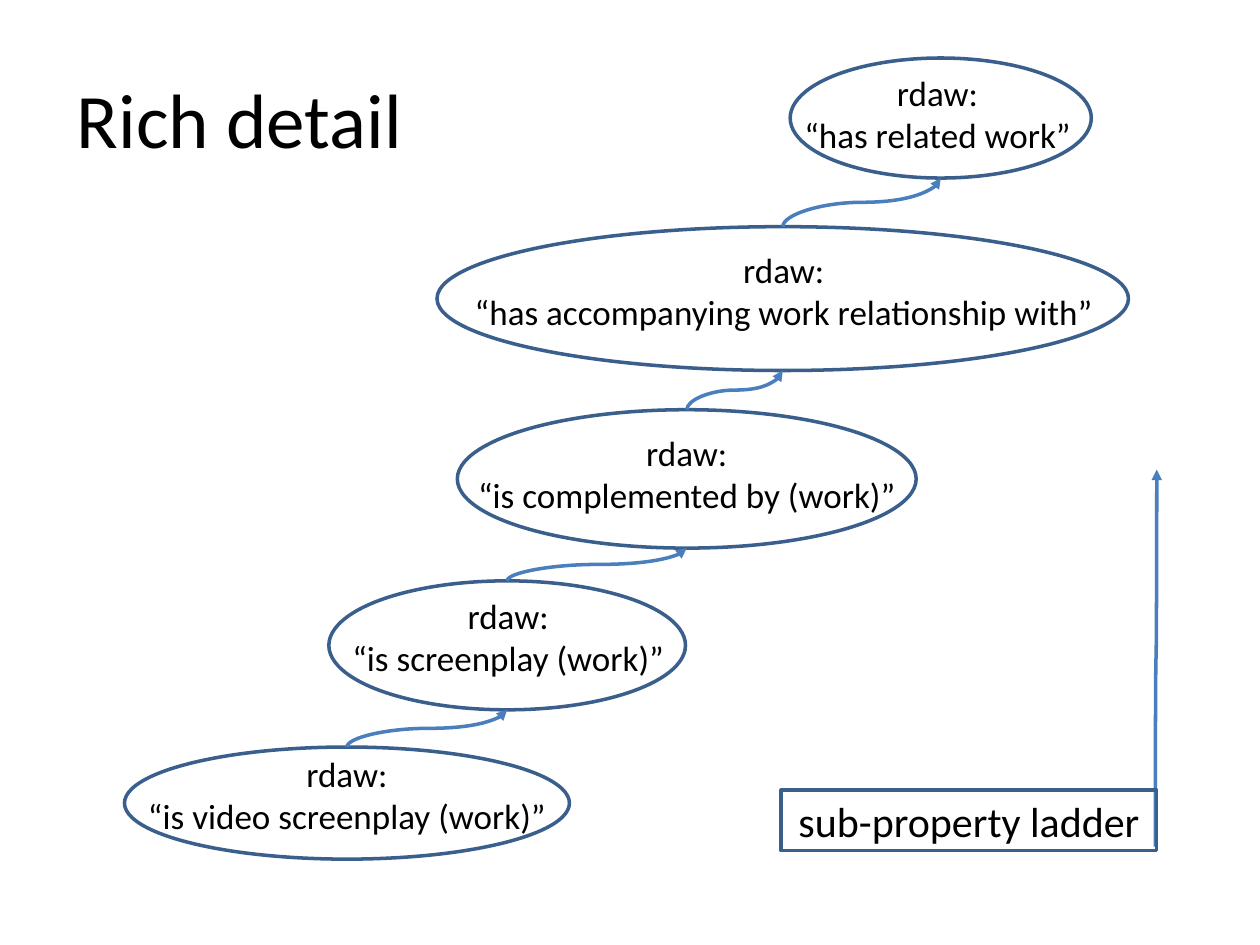
from itertools import pairwise

from lxml.etree import SubElement
from pptx import Presentation
from pptx.dml.color import RGBColor
from pptx.enum.shapes import MSO_CONNECTOR as Link, MSO_SHAPE as Shape
from pptx.enum.text import MSO_ANCHOR as Anchor, MSO_AUTO_SIZE as Fit, PP_ALIGN as Align
from pptx.oxml.ns import qn
from pptx.util import Cm, Pt


def colour(hex_string):
    return RGBColor.from_string(hex_string)


class LadderSlide:
    FONT, INK, OUTLINE, ARROW = "Calibri", "000000", "3A5F8C", "4B7EBC"
    LINE_WIDTH = Pt(2)
    INSET = Cm(0.1)

    def __init__(self, deck):
        self.slide = deck.slides.add_slide(deck.slide_layouts[6])
        self.shapes = self.slide.shapes

    def set_text(self, shape, lines, size, align=Align.CENTER, inset=INSET, wrap=True):
        frame = shape.text_frame
        settings = {"word_wrap": wrap, "auto_size": Fit.SHAPE_TO_FIT_TEXT,
                    "vertical_anchor": Anchor.TOP}
        if inset is not None:
            for side in ("left", "top", "right", "bottom"):
                settings[f"margin_{side}"] = inset
        for name, value in settings.items():
            setattr(frame, name, value)
        frame.text = "\n".join(lines)
        for paragraph in frame.paragraphs:
            paragraph.alignment = align
            for name, value in {"name": self.FONT, "size": Pt(size)}.items():
                setattr(paragraph.font, name, value)
            paragraph.font.color.rgb = colour(self.INK)

    def outline(self, shapes, kind, box):
        shape = shapes.add_shape(kind, *map(Cm, box))
        shape.shadow.inherit = False
        shape.fill.background()
        shape.line.color.rgb = colour(self.OUTLINE)
        shape.line.width = self.LINE_WIDTH
        return shape

    def title(self, text, box):
        self.set_text(self.shapes.add_textbox(*map(Cm, box)), [text], 44,
                      Align.LEFT, inset=None, wrap=False)

    def rung(self, lines, oval, label):
        group = self.shapes.add_group_shape()
        self.outline(group.shapes, Shape.OVAL, oval)
        self.set_text(group.shapes.add_textbox(*map(Cm, label)), lines, 20)

    def caption(self, text, box):
        self.set_text(self.outline(self.shapes, Shape.RECTANGLE, box), [text], 24)

    def rising_arrow(self, x1, y1, x2, y2):
        # An upright S-curve is a flipped connector turned by 90 degrees
        mid_x, mid_y = (x1 + x2) / 2, (y1 + y2) / 2
        half_w, half_h = (y1 - y2) / 2, (x2 - x1) / 2
        arrow = self.shapes.add_connector(
            Link.CURVE, Cm(mid_x + half_w), Cm(mid_y + half_h),
            Cm(mid_x - half_w), Cm(mid_y - half_h))
        arrow.line.color.rgb = colour(self.ARROW)
        arrow.line.width = self.LINE_WIDTH
        properties = arrow._element.spPr
        properties.find(qn("a:xfrm")).set("rot", "5400000")
        SubElement(properties.find(qn("a:ln")), qn("a:tailEnd"), type="triangle")
        SubElement(properties, qn("a:effectLst"))


# Bottom to top: name, oval box, label left, label drop below oval top, label width
RUNGS = [
    ("is video screenplay (work)", (2.51, 15.06, 8.97, 2.26), 2.51, 0, 8.97),
    ("is screenplay (work)", (6.63, 11.71, 7.19, 2.6), 6.5, 0.18, 7.49),
    ("is complemented by (work)", (9.22, 8.26, 9.25, 2.79), 9.25, 0.33, 9.19),
    ("has accompanying work relationship with", (8.81, 4.57, 13.94, 2.9),
     8.84, 0.33, 13.92),
    ("has related work", (15.93, 1.17, 6.07, 2.42), 15.8, 0.18, 6.2),
]
LABEL_HEIGHT = 1.9


def main():
    deck = Presentation()
    deck.slide_width, deck.slide_height = Cm(25.4), Cm(19.05)
    ladder = LadderSlide(deck)

    # Title
    ladder.title("Rich detail", (1.3, 1.32, 7.14, 2.13))

    # Properties, from narrow to broad
    for name, oval, left, drop, width in RUNGS:
        ladder.rung(["rdaw:", f"“{name}”"], oval,
                    (left, oval[1] + drop, width, LABEL_HEIGHT))

    # Each property points up to its parent
    ovals = [oval for _, oval, *_ in RUNGS]
    for (x, y, w, _), (px, py, pw, ph) in pairwise(ovals):
        ladder.rising_arrow(x + w / 2, y, px + pw / 2, py + ph)

    # Direction of the ladder
    ladder.rising_arrow(23.29, 17.07, 23.32, 9.47)
    ladder.caption("sub-property ladder", (15.75, 15.93, 7.57, 1.22))

    deck.save("out.pptx")


if __name__ == "__main__":
    main()
